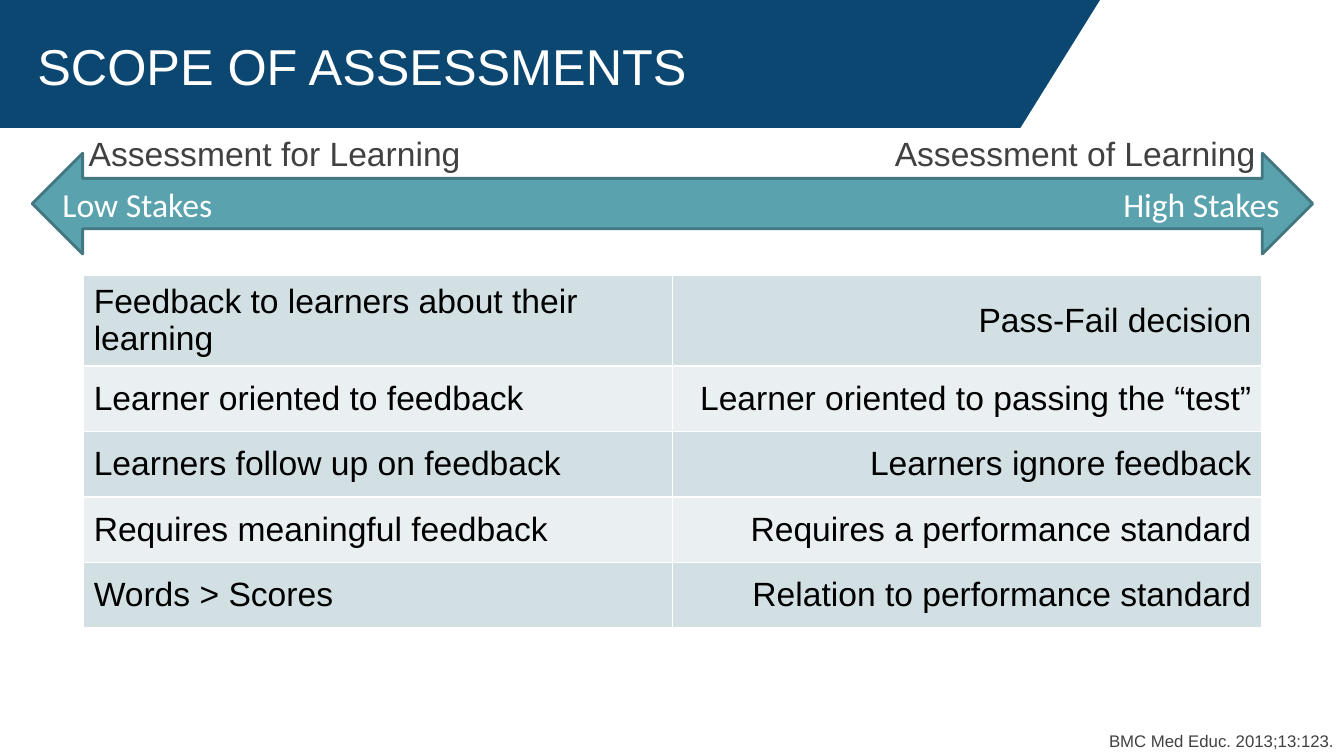
"""Build the slide comparing assessment for learning with assessment of learning."""
from lxml import etree
from pptx import Presentation
from pptx.dml.color import RGBColor
from pptx.enum.shapes import MSO_SHAPE
from pptx.enum.text import MSO_ANCHOR, PP_ALIGN
from pptx.oxml.ns import qn
from pptx.util import Inches, Pt

TITLE = "SCOPE OF ASSESSMENTS"
STAKES = ("Low Stakes", "High Stakes")
HEADINGS = ("Assessment for Learning", "Assessment of Learning")
ROWS = [
    ("Feedback to learners about their learning", "Pass-Fail decision"),
    ("Learner oriented to feedback", "Learner oriented to passing the “test”"),
    ("Learners follow up on feedback", "Learners ignore feedback"),
    ("Requires meaningful feedback", "Requires a performance standard"),
    ("Words > Scores", "Relation to performance standard"),
]
CITATION = "BMC Med Educ. 2013;13:123."

NAVY = RGBColor(0x0C, 0x47, 0x72)
TEAL = RGBColor(0x5A, 0xA2, 0xAE)
DARK_TEAL = RGBColor(0x43, 0x78, 0x81)
GRAY = RGBColor(0x41, 0x41, 0x41)
BLACK = RGBColor(0, 0, 0)
WHITE = RGBColor(0xFF, 0xFF, 0xFF)
BANDS = (RGBColor(0xD2, 0xE0, 0xE3), RGBColor(0xEA, 0xF0, 0xF2))

LEFT, RIGHT = PP_ALIGN.LEFT, PP_ALIGN.RIGHT
SIDES = (LEFT, RIGHT)
TOP, MIDDLE = MSO_ANCHOR.TOP, MSO_ANCHOR.MIDDLE
DOUBLE_ARROW = MSO_SHAPE.LEFT_RIGHT_ARROW

BANNER = [(0, 0), (0, 1.27), (10.12, 1.27), (10.91, 0)]
TABLE_LEFT, TABLE_TOP = 0.83, 2.73
COLUMN_WIDTH, ROW_HEIGHT = 5.84, 0.65
HEADING_WIDTH = 4.92
HEADING_LEFTS = (TABLE_LEFT, 7.58)
HIGH_STAKES_TAB = 12.07


def write(frame, text, size, color, align=LEFT, font="Arial"):
    para = frame.paragraphs[0]
    para.text = text
    para.alignment = align
    para.font.size = Pt(size)
    para.font.name = font
    para.font.color.rgb = color
    return para


def set_insets(frame, across, down):
    frame.margin_left = frame.margin_right = Inches(across)
    frame.margin_top = frame.margin_bottom = Inches(down)


def add_label(page, place, text, size, color, align=LEFT, insets=(0.05, 0.05), anchor=TOP):
    box = page.shapes.add_textbox(*map(Inches, place))
    frame = box.text_frame
    frame.word_wrap = True
    frame.vertical_anchor = anchor
    set_insets(frame, *insets)
    return write(frame, text, size, color, align)


def add_banner(page):
    points = [(Inches(x), Inches(y)) for x, y in BANNER]
    builder = page.shapes.build_freeform(*points[0])
    builder.add_line_segments(points[1:], close=True)
    banner = builder.convert_to_shape()
    banner.shadow.inherit = False
    banner.fill.solid()
    banner.fill.fore_color.rgb = NAVY
    banner.line.fill.background()
    title = add_label(page, (0.37, 0.21, 9.82, 0.98), TITLE, 36, WHITE,
                      insets=(0, 0), anchor=MIDDLE)
    title.line_spacing = 0.8


def add_stakes_arrow(page):
    arrow = page.shapes.add_shape(DOUBLE_ARROW, *map(Inches, (0.32, 1.52, 12.7, 1)))
    arrow.shadow.inherit = False
    arrow.fill.solid()
    arrow.fill.fore_color.rgb = TEAL
    arrow.line.color.rgb = DARK_TEAL
    arrow.line.width = Pt(2)
    frame = arrow.text_frame
    frame.vertical_anchor = MIDDLE
    set_insets(frame, 0.05, 0.05)
    properties = frame.paragraphs[0]._p.get_or_add_pPr()
    tabs = etree.SubElement(properties, qn("a:tabLst"))
    etree.SubElement(tabs, qn("a:tab"), pos=str(Inches(HIGH_STAKES_TAB)), algn="r")
    write(frame, "\t".join(STAKES), 24, WHITE, font="Calibri")


def add_borders(cell):
    properties = cell._tc.get_or_add_tcPr()
    for edge in ("a:lnL", "a:lnR", "a:lnT", "a:lnB"):
        line = etree.SubElement(properties, qn(edge), w=str(Pt(1)))
        fill = etree.SubElement(line, qn("a:solidFill"))
        etree.SubElement(fill, qn("a:srgbClr"), val=str(WHITE))


def add_comparison(page):
    columns = len(HEADINGS)
    table = page.shapes.add_table(
        len(ROWS), columns, Inches(TABLE_LEFT), Inches(TABLE_TOP),
        Inches(columns * COLUMN_WIDTH), Inches(len(ROWS) * ROW_HEIGHT)).table
    table.first_row = False
    table.horz_banding = False
    for column in table.columns:
        column.width = Inches(COLUMN_WIDTH)
    for index, texts in enumerate(ROWS):
        table.rows[index].height = Inches(ROW_HEIGHT)
        for side, text in enumerate(texts):
            cell = table.cell(index, side)
            add_borders(cell)
            cell.fill.solid()
            cell.fill.fore_color.rgb = BANDS[index % 2]
            cell.vertical_anchor = MIDDLE
            write(cell.text_frame, text, 24, BLACK, SIDES[side])


def main():
    deck = Presentation()
    deck.slide_width, deck.slide_height = Inches(13.33), Inches(7.5)
    page = deck.slides.add_slide(deck.slide_layouts[6])
    add_banner(page)
    add_stakes_arrow(page)
    add_comparison(page)
    add_label(page, (7.45, 7.2, 5.88, 0.3), CITATION, 12, GRAY, RIGHT, insets=(0.1, 0.05))
    for left, heading, align in zip(HEADING_LEFTS, HEADINGS, SIDES):
        add_label(page, (left, 1.27, HEADING_WIDTH, 0.5), heading, 24, GRAY, align)
    deck.save("out.pptx")


if __name__ == "__main__":
    main()
